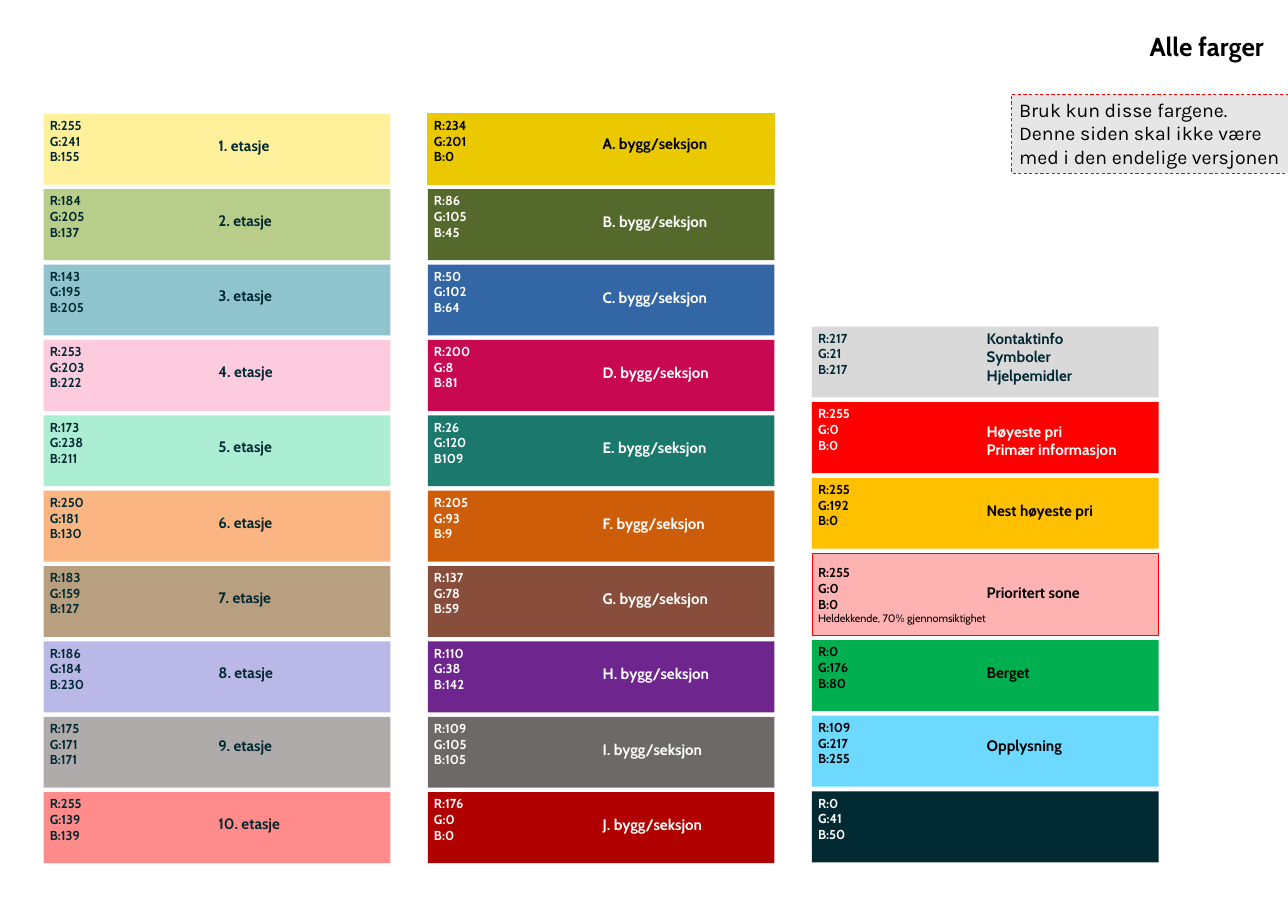
from dataclasses import dataclass
from typing import Optional

from pptx import Presentation
from pptx import util as u
from pptx.dml import color
from pptx.enum import dml, shapes, text

Pt = u.Pt
DARK, BLACK, WHITE, RED = "002932", "000000", "FFFFFF", "FF0000"
SWATCH_W, SWATCH_H = 320.4, 65.5
LABEL_X, LABEL_W, LABEL_H = 161.5, 156, 58


@dataclass
class Line:
    text: str
    size: float = 12
    bold: bool = True
    font: str = "Cabin"


@dataclass
class Box:
    x: float
    y: float
    w: float
    h: float


@dataclass
class Border:
    ink: str
    width: float
    dashed: bool = False


@dataclass
class Swatch:
    fill: str
    codes: str
    label: str = ""
    ink: str = WHITE
    middle: float = 30
    height: float = SWATCH_H
    inset: float = 3.5
    caption: str = ""
    border: Optional[Border] = None


@dataclass
class Column:
    x: float
    y: float
    gap: float
    swatches: list[Swatch]


def rgb(value: str) -> color.RGBColor:
    return color.RGBColor.from_string(value)


def write(s, lines: list[Line], ink: str, **frame) -> None:
    tf = s.text_frame
    align = frame.pop("alignment", text.PP_ALIGN.LEFT)
    for name, value in {"word_wrap": True, **frame}.items():
        setattr(tf, name, value)
    for i, line in enumerate(lines):
        p = tf.add_paragraph() if i else tf.paragraphs[0]
        p.alignment = align
        r = p.add_run()
        r.text = line.text
        font_format = {"name": line.font, "size": Pt(line.size), "bold": line.bold}
        for name, value in font_format.items():
            setattr(r.font, name, value)
        r.font.color.rgb = rgb(ink)


def panel(sl, box: Box, fill: str, border: Optional[Border] = None):
    s = sl.shapes.add_shape(
        shapes.MSO_SHAPE.RECTANGLE, Pt(box.x), Pt(box.y), Pt(box.w), Pt(box.h))
    s.shadow.inherit = False
    s.fill.solid()
    s.fill.fore_color.rgb = rgb(fill)
    if border is None:
        s.line.fill.background()
    else:
        s.line.color.rgb = rgb(border.ink)
        s.line.width = Pt(border.width)
        if border.dashed:
            s.line.dash_style = dml.MSO_LINE.DASH
    return s


def draw_swatch(sl, swatch: Swatch, x: float, y: float) -> None:
    s = panel(sl, Box(x, y, SWATCH_W, swatch.height), swatch.fill, swatch.border)
    lines = [Line(code) for code in swatch.codes.split()]
    if swatch.caption:
        lines.append(Line(swatch.caption, 10, False))
    write(s, lines, swatch.ink, vertical_anchor=text.MSO_ANCHOR.TOP,
          margin_left=Pt(5.7), margin_right=Pt(5.7),
          margin_top=Pt(swatch.inset), margin_bottom=Pt(0))
    if swatch.label:
        tb = sl.shapes.add_textbox(
            Pt(x + LABEL_X), Pt(y + swatch.middle - LABEL_H / 2), Pt(LABEL_W), Pt(LABEL_H))
        write(tb, [Line(t, 14) for t in swatch.label.split("\n")], swatch.ink,
              vertical_anchor=text.MSO_ANCHOR.MIDDLE,
              margin_left=0, margin_right=0, margin_top=0, margin_bottom=0)


def draw_column(sl, column: Column) -> None:
    y = column.y
    for swatch in column.swatches:
        draw_swatch(sl, swatch, column.x, y)
        y += swatch.height + column.gap


FLOORS = [
    ("FFF19B", "R:255 G:241 B:155"),
    ("B8CD89", "R:184 G:205 B:137"),
    ("8FC3CD", "R:143 G:195 B:205"),
    ("FDCBDE", "R:253 G:203 B:222"),
    ("ACEED3", "R:173 G:238 B:211"),
    ("FAB582", "R:250 G:181 B:130"),
    ("B79F7F", "R:183 G:159 B:127"),
    ("BAB8E6", "R:186 G:184 B:230"),
    ("AFABAB", "R:175 G:171 B:171"),
    ("FF8B8B", "R:255 G:139 B:139"),
]
SECTIONS = [
    ("EAC900", "R:234 G:201 B:0"),
    ("56692D", "R:86 G:105 B:45"),
    ("3266A4", "R:50 G:102 B:64"),
    ("C80851", "R:200 G:8 B:81"),
    ("1A786D", "R:26 G:120 B109"),
    ("CD5D09", "R:205 G:93 B:9"),
    ("894E3B", "R:137 G:78 B:59"),
    ("6E268E", "R:110 G:38 B:142"),
    ("6D6969", "R:109 G:105 B:105"),
    ("B00000", "R:176 G:0 B:0"),
]
floors = [Swatch(fill, codes, f"{n}. etasje", DARK, 26.5 if n == 9 else 29)
          for n, (fill, codes) in enumerate(FLOORS, 1)]
sections = [Swatch(fill, codes, f"{letter}. bygg/seksjon")
            for letter, (fill, codes) in zip("ABCDEFGHIJ", SECTIONS)]
sections[0].ink = BLACK
sections[0].middle = 27.5
sections[0].border = Border("EAC900", 1)
purposes = [
    Swatch("D9D9D9", "R:217 G:21 B:217", "Kontaktinfo\nSymboler\nHjelpemidler", DARK, 28),
    Swatch(RED, "R:255 G:0 B:0", "Høyeste pri\nPrimær informasjon", WHITE, 35.5),
    Swatch("FFC000", "R:255 G:192 B:0", "Nest høyeste pri", BLACK),
    Swatch("FFB2B2", "R:255 G:0 B:0", "Prioritert sone", BLACK, 36, 75.6, 10.5,
           "Heldekkende, 70% gjennomsiktighet", Border(RED, 0.25)),
    Swatch("00B050", "R:0 G:176 B:80", "Berget", BLACK),
    Swatch("6DD9FF", "R:109 G:217 B:255", "Opplysning", BLACK, 27),
    Swatch(DARK, "R:0 G:41 B:50"),
]
COLUMNS = [
    Column(40.3, 105.1, 4.15, floors),
    Column(395.3, 105.1, 4.15, sections),
    Column(750.2, 301.7, 4.4, purposes),
]


def main() -> None:
    prs = Presentation()
    prs.slide_width, prs.slide_height = Pt(1190.16), Pt(841.68)
    sl = prs.slides.add_slide(prs.slide_layouts[6])

    title = panel(sl, Box(988.2, 0, 202, 128.2), WHITE)
    write(title, [Line("Alle farger", 24)], BLACK, alignment=text.PP_ALIGN.RIGHT,
          vertical_anchor=text.MSO_ANCHOR.TOP, margin_left=Pt(5.7),
          margin_right=Pt(22.3), margin_top=Pt(28.1), margin_bottom=Pt(8.6))

    for column in COLUMNS:
        draw_column(sl, column)

    note = panel(sl, Box(934.6, 87.1, 255.6, 72.7), "E7E6E6", Border(RED, 0.75, True))
    write(note, [Line(t, 18, False, "Karla") for t in (
        "Bruk kun disse fargene.",
        "Denne siden skal ikke være med i den endelige versjonen")],
        BLACK, vertical_anchor=text.MSO_ANCHOR.TOP)

    prs.save("out.pptx")


if __name__ == "__main__":
    main()
